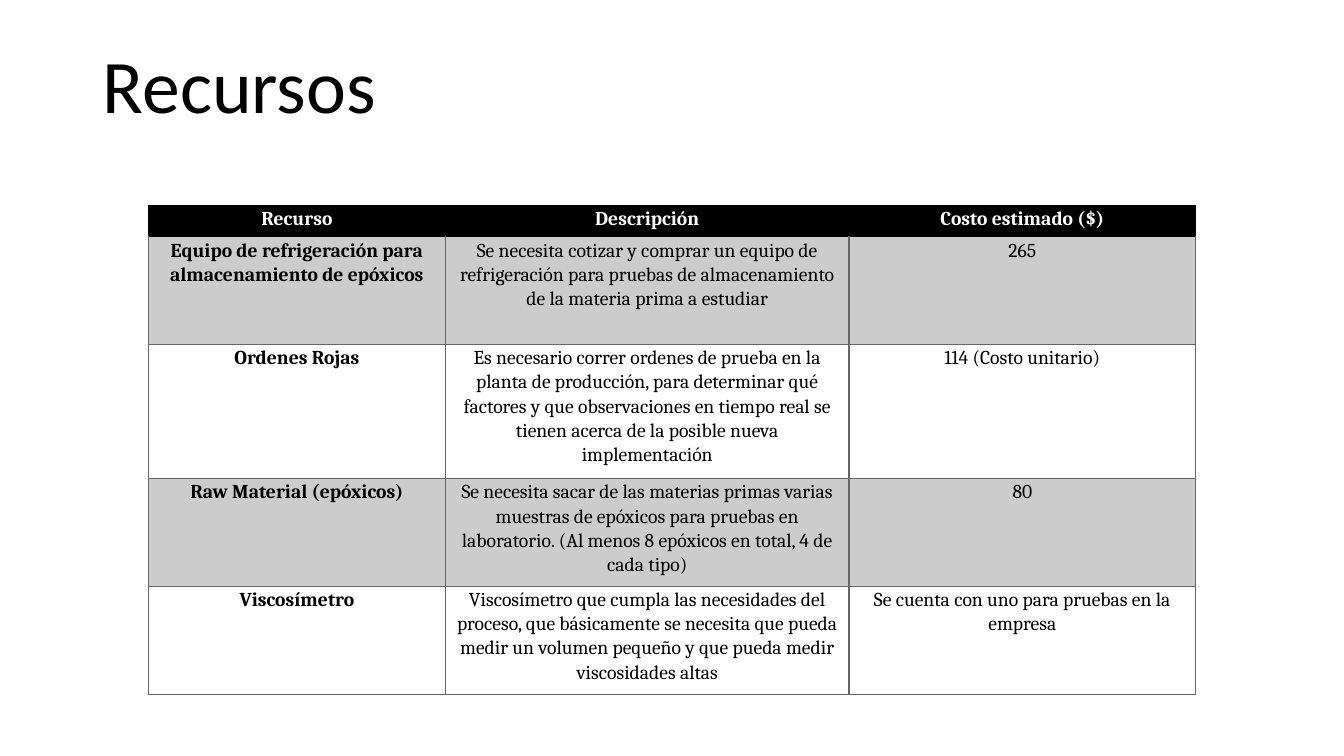
"""Build a slide with a table of project resources and their estimated cost."""
from dataclasses import dataclass

from pptx import Presentation
from pptx.dml.color import RGBColor as Color
from pptx.enum.text import MSO_ANCHOR as Anchor, PP_ALIGN as Align
from pptx.oxml.ns import qn
from pptx.slide import Slide
from pptx.table import _Cell as Cell
from pptx.text.text import TextFrame as Frame
from pptx.util import Inches, Pt
from lxml.etree import SubElement as add_node


@dataclass(frozen=True)
class Theme:
    black: str = "000000"
    white: str = "FFFFFF"
    band: str = "CCCCCC"
    rule: str = "666666"
    head_font: str = "Calibri"
    body_font: str = "Cambria"
    head_size: int = 54
    body_size: int = 14


@dataclass(frozen=True)
class Item:
    name: str
    detail: str
    cost: str
    height: float


THEME = Theme()
WIDTHS = (2.95, 4, 3.44)
ITEMS = (
    Item("Recurso", "Descripción", "Costo estimado ($)", 0.31),
    Item("Equipo de refrigeración para almacenamiento de epóxicos",
         "Se necesita cotizar y comprar un equipo de refrigeración para pruebas de "
         "almacenamiento de la materia prima a estudiar",
         "265", 1.07),
    Item("Ordenes Rojas",
         "Es necesario correr ordenes de prueba en la planta de producción, para "
         "determinar qué factores y que observaciones en tiempo real se tienen "
         "acerca de la posible nueva implementación",
         "114 (Costo unitario)", 1.33),
    Item("Raw Material (epóxicos)",
         "Se necesita sacar de las materias primas varias muestras de epóxicos para "
         "pruebas en laboratorio. (Al menos 8 epóxicos en total, 4 de cada tipo)",
         "80", 1.07),
    Item("Viscosímetro",
         "Viscosímetro que cumpla las necesidades del proceso, que básicamente se "
         "necesita que pueda medir un volumen pequeño y que pueda medir "
         "viscosidades altas",
         "Se cuenta con uno para pruebas en la empresa", 1.07),
)


def put_text(frame: Frame, text: str, *, font: str, size: int, color: str,
             bold: bool = False, align: Align = Align.LEFT,
             line: float = 1.0, after: float = 0) -> None:
    """Write one formatted paragraph."""
    frame.word_wrap = True
    par = frame.paragraphs[0]
    par.alignment, par.line_spacing = align, line
    par.space_before, par.space_after = Pt(0), Pt(after)
    run = par.add_run()
    run.text = text
    run.font.name, run.font.size, run.font.bold = font, Pt(size), bold
    run.font.color.rgb = Color.from_string(color)


def put_edge(cell: Cell, side: str, color: str) -> None:
    """Add a one-point border to one side of a cell."""
    line = add_node(cell._tc.get_or_add_tcPr(), qn(f"a:ln{side}"), w=str(Pt(1)))
    fill = add_node(line, qn("a:solidFill"))
    add_node(fill, qn("a:srgbClr"), val=color)


def put_cell(cell: Cell, text: str, row: int, col: int) -> None:
    """Fill, border and write one table cell."""
    head = row == 0
    cell.margin_left = cell.margin_right = Inches(0.1)
    cell.margin_top, cell.margin_bottom = Inches(0.01), Inches(0)
    for side in "LRTB":
        dark = head or (row == 1 and side == "T")
        put_edge(cell, side, THEME.black if dark else THEME.rule)
    shade = THEME.black if head else THEME.band if row % 2 else THEME.white
    cell.fill.solid()
    cell.fill.fore_color.rgb = Color.from_string(shade)
    put_text(cell.text_frame, text, font=THEME.body_font, size=THEME.body_size,
             color=THEME.white if head else THEME.black,
             bold=head or col == 0, align=Align.CENTER, line=1.07, after=8)


def put_title(slide: Slide, text: str) -> None:
    """Place and write the slide title."""
    title = slide.shapes.title
    title.left, title.top = Inches(0.92), Inches(0.32)
    title.width, title.height = Inches(11.5), Inches(1.02)
    title.text_frame.vertical_anchor = Anchor.BOTTOM
    put_text(title.text_frame, text, font=THEME.head_font, size=THEME.head_size,
             color=THEME.black, line=0.9)


def put_table(slide: Slide, items: tuple[Item, ...]) -> None:
    """Draw the table with one row per item."""
    high = sum(item.height for item in items)
    table = slide.shapes.add_table(
        len(items), len(WIDTHS), Inches(1.47), Inches(2.04),
        Inches(sum(WIDTHS)), Inches(high)).table
    table.horz_banding = False
    for col, width in enumerate(WIDTHS):
        table.columns[col].width = Inches(width)
    for row, item in enumerate(items):
        table.rows[row].height = Inches(item.height)
        for col, text in enumerate((item.name, item.detail, item.cost)):
            put_cell(table.cell(row, col), text, row, col)


def main() -> None:
    """Build and save the deck."""
    deck = Presentation()
    deck.slide_width, deck.slide_height = Inches(13.33), Inches(7.5)
    slide = deck.slides.add_slide(deck.slide_layouts[5])
    put_title(slide, "Recursos")
    put_table(slide, ITEMS)
    deck.save("out.pptx")


if __name__ == "__main__":
    main()
